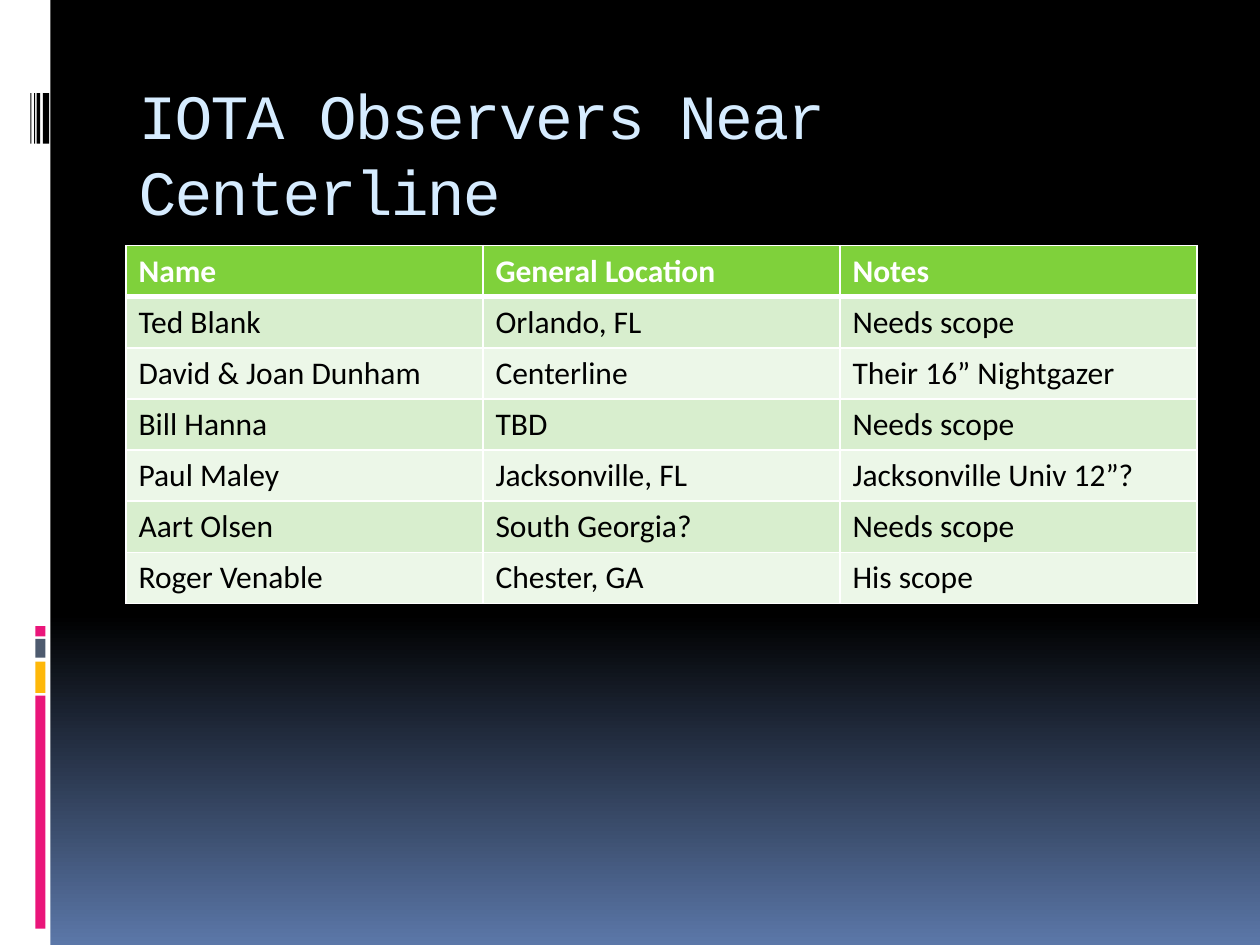
"""Build a slide listing the observers near the centerline in a table."""
from lxml import etree
from pptx import Presentation, util as u
from pptx.dml.color import RGBColor
from pptx.enum import shapes, text
from pptx.oxml.ns import qn

HUES = {"black": "000000", "white": "FFFFFF", "blue": "5B77A8", "sky": "D6ECFF",
        "pink": "EA157A", "gold": "FEB80A", "slate": "4E5B6F",
        "head": "7FD13B", "odd": "D8EECE", "even": "ECF7E8"}
TITLE = "IOTA Observers Near Centerline"
ROWS = [
    ("Name", "General Location", "Notes"),
    ("Ted Blank", "Orlando, FL", "Needs scope"),
    ("David & Joan Dunham", "Centerline", "Their 16” Nightgazer"),
    ("Bill Hanna", "TBD", "Needs scope"),
    ("Paul Maley", "Jacksonville, FL", "Jacksonville Univ 12”?"),
    ("Aart Olsen", "South Georgia?", "Needs scope"),
    ("Roger Venable", "Chester, GA", "His scope"),
]
BLOCKS = [("pink", 5.52, 1.85), ("gold", 5.25, 0.25),
          ("slate", 5.07, 0.15), ("pink", 4.97, 0.08)]
BARS = [(0.34, 0.05), (0.29, 0.03), (0.27, 0.01), (0.24, 0.01)]
WIDE, HIGH = 10, 7.5
LEFT, SPAN = WIDE * 0.1, WIDE * 0.85
STOPS = [(0, "black"), (65, "black"), (100, "blue")]


def rgb(name):
    return RGBColor.from_string(HUES[name])


def rect(slide, hue, *box):
    shape = slide.shapes.add_shape(shapes.MSO_SHAPE.RECTANGLE, *map(u.Inches, box))
    shape.shadow.inherit = False
    shape.fill.solid()
    shape.fill.fore_color.rgb = rgb(hue)
    shape.line.fill.background()


def write(para, words, font, size, hue, bold=False):
    run = para.add_run()
    run.text = words
    run.font.name, run.font.size, run.font.bold = font, u.Pt(size), bold
    run.font.color.rgb = rgb(hue)
    return run


def paint(slide):
    fill = slide.background.fill
    fill.gradient()
    fill.gradient_angle = 270
    stops = fill._fill._gradFill.find(qn("a:gsLst"))
    stops.clear()
    for share, hue in STOPS:
        stop = etree.SubElement(stops, qn("a:gs"), pos=str(share * 1000))
        etree.SubElement(stop, qn("a:srgbClr"), val=HUES[hue])


def edge(cell, base):
    props = cell._tc.get_or_add_tcPr()
    for spot, (side, wide) in enumerate(zip("LRTB", (1, 1, 1, base))):
        line = etree.Element(qn(f"a:ln{side}"), w=str(u.Pt(wide)))
        fill = etree.SubElement(line, qn("a:solidFill"))
        etree.SubElement(fill, qn("a:srgbClr"), val=HUES["white"])
        props.insert(spot, line)


def head(slide):
    title = slide.shapes.title
    title.left, title.top, title.width, title.height = map(
        u.Inches, (LEFT, 0.56, SPAN, 1))
    frame = title.text_frame
    frame.word_wrap, frame.auto_size = True, text.MSO_AUTO_SIZE.NONE
    frame.vertical_anchor = text.MSO_ANCHOR.TOP
    para = frame.paragraphs[0]
    para.alignment = text.PP_ALIGN.LEFT
    run = write(para, TITLE, "Courier New", 36, "sky")
    run.font._element.set("spc", "-100")


def grid(slide):
    count, cols = len(ROWS), len(ROWS[0])
    table = slide.shapes.add_table(
        count, cols, *map(u.Inches, (LEFT, 1.95, SPAN, 2.84))).table
    for r, row in enumerate(ROWS):
        hue = "head" if r == 0 else "odd" if r % 2 else "even"
        for c, words in enumerate(row):
            cell = table.cell(r, c)
            cell.fill.solid()
            cell.fill.fore_color.rgb = rgb(hue)
            edge(cell, 1 if r else 3)
            write(cell.text_frame.paragraphs[0], words, "Calibri", 18,
                  "black" if r else "white", r == 0)


def main():
    deck = Presentation()
    deck.slide_width, deck.slide_height = u.Inches(WIDE), u.Inches(HIGH)
    slide = deck.slides.add_slide(deck.slide_layouts[5])
    paint(slide)
    rect(slide, "white", 0, 0, WIDE * 0.04, HIGH)
    for hue, top, tall in BLOCKS:
        rect(slide, hue, 0.28, top, 0.08, tall)
    for left, wide in BARS:
        rect(slide, "black", left, 0.74, wide, 0.4)
    head(slide)
    grid(slide)
    deck.save("out.pptx")


if __name__ == "__main__":
    main()
